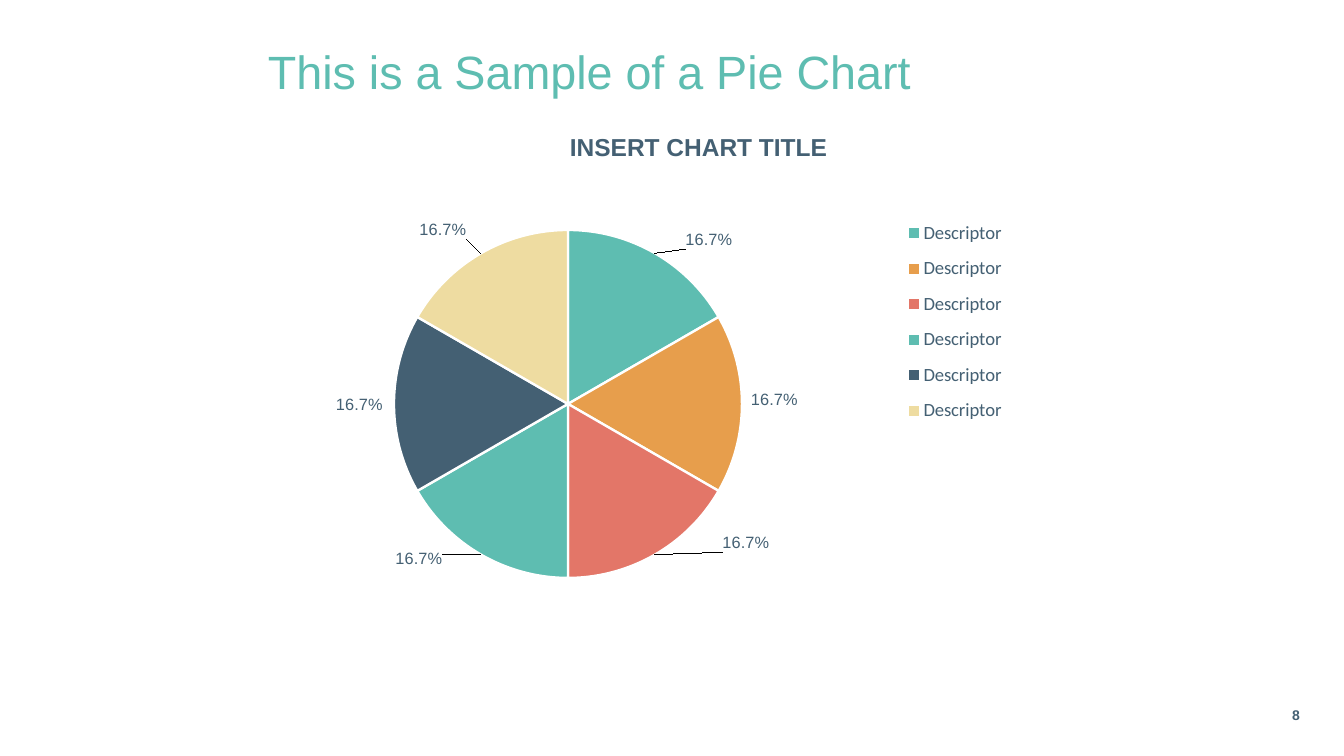
import dataclasses
import typing

import lxml.etree
import pptx
import pptx.chart.data
import pptx.dml.color
import pptx.enum.chart
import pptx.enum.text
import pptx.oxml.ns
import pptx.util

PX = 914400 // 84  # EMU per px


@dataclasses.dataclass(frozen=True)
class Theme:
    teal: str = "5EBDB1"
    orange: str = "E79E4C"
    coral: str = "E37668"
    slate: str = "446073"
    cream: str = "EEDCA1"
    white: str = "FFFFFF"
    font: str = "Arial"
    legend_font: str = "Calibri"
    title_size: int = 40
    heading_size: int = 21
    legend_size: int = 16
    label_size: int = 14
    number_size: int = 12


class Box(typing.NamedTuple):
    x: int
    y: int
    w: int
    h: int


class Slice(typing.NamedTuple):
    name: str
    value: float
    color: str
    dx: int  # label shift in px
    dy: int


T = Theme()
ALIGN = pptx.enum.text.PP_ALIGN
ANCHOR = pptx.enum.text.MSO_ANCHOR
CHART = Box(144, 125, 1074, 483)
PIE = Box(336, 230, 464, 348)
LEGEND = Box(899, 209, 112, 226)
SLICES = [
    Slice("Descriptor", 16.7, T.teal, 28, 0),
    Slice("Descriptor", 16.7, T.orange, 4, -4),
    Slice("Descriptor", 16.7, T.coral, 65, -25),
    Slice("Descriptor", 16.7, T.teal, -36, -9),
    Slice("Descriptor", 16.7, T.slate, -6, 1),
    Slice("Descriptor", 16.7, T.cream, -12, -10),
]


def rgb(color: str) -> pptx.dml.color.RGBColor:
    return pptx.dml.color.RGBColor.from_string(color)


def emu(box: Box) -> list[int]:
    return [v * PX for v in box]


def set_font(font, name: str, size: int, color: str, bold: bool = False) -> None:
    font.name, font.size, font.bold = name, pptx.util.Pt(size), bold
    font.color.rgb = rgb(color)


def add_text(s, box: Box, text: str, *, size: int, color: str = T.slate,
             bold: bool = False, align=ALIGN.LEFT, anchor=ANCHOR.TOP,
             inset: tuple[int, int] = (0, 0)) -> None:
    tf = s.shapes.add_textbox(*emu(box)).text_frame
    tf.word_wrap = True
    tf.vertical_anchor = anchor
    tf.margin_left = tf.margin_right = inset[0] * PX
    tf.margin_top = tf.margin_bottom = inset[1] * PX
    p = tf.paragraphs[0]
    p.alignment = align
    r = p.add_run()
    r.text = text
    set_font(r.font, T.font, size, color, bold)


def make_layout(**values: typing.Any):
    """Build a manual chart layout from its settings."""
    qn = pptx.oxml.ns.qn
    layout = lxml.etree.Element(qn("c:layout"))
    manual = lxml.etree.SubElement(layout, qn("c:manualLayout"))
    for tag, value in values.items():
        lxml.etree.SubElement(manual, qn(f"c:{tag}")).set("val", str(value))
    return layout


def box_layout(box: Box, **target: str):
    return make_layout(
        **target, xMode="edge", yMode="edge",
        x=round((box.x - CHART.x) / CHART.w, 4),
        y=round((box.y - CHART.y) / CHART.h, 4),
        w=round(box.w / CHART.w, 4), h=round(box.h / CHART.h, 4))


def add_pie(s) -> None:
    data = pptx.chart.data.CategoryChartData()
    data.categories = [item.name for item in SLICES]
    data.add_series("Series 1", [item.value for item in SLICES])
    kind = pptx.enum.chart.XL_CHART_TYPE.PIE
    chart = s.shapes.add_chart(kind, *emu(CHART), data).chart
    chart.has_title = False
    set_font(chart.font, T.legend_font, T.legend_size, T.slate)

    # Legend and plot placement
    chart.has_legend = True
    legend = chart.legend
    legend.position = pptx.enum.chart.XL_LEGEND_POSITION.RIGHT
    legend.include_in_layout = False
    set_font(legend.font, T.legend_font, T.legend_size, T.slate)
    qn = pptx.oxml.ns.qn
    area = chart.plots[0]._element.getparent()
    for parent, layout in (
            (area, box_layout(PIE, layoutTarget="inner")),
            (legend._element, box_layout(LEGEND))):
        for old in parent.findall(qn("c:layout")):
            parent.remove(old)
        parent.insert(0 if parent is area else 1, layout)

    # Percent labels
    series = chart.plots[0].series[0]
    outside = pptx.enum.chart.XL_LABEL_POSITION.OUTSIDE_END
    labels = series.data_labels
    labels.number_format, labels.number_format_is_linked = "0.0%", False
    labels.show_value, labels.show_percentage = False, True
    labels.position = outside
    set_font(labels.font, T.font, T.label_size, T.slate)

    # Slices, each with a shifted label
    for i, item in enumerate(SLICES):
        point = series.points[i]
        point.format.fill.solid()
        point.format.fill.fore_color.rgb = rgb(item.color)
        point.format.line.color.rgb = rgb(T.white)
        point.format.line.width = pptx.util.Pt(2)
        point.data_label.position = outside
        set_font(point.data_label.font, T.font, T.label_size, T.slate)
        label = labels._element.findall(qn("c:dLbl"))[i]
        label.insert(1, make_layout(x=round(item.dx / CHART.w, 4),
                                    y=round(item.dy / CHART.h, 4)))
        fmt = lxml.etree.Element(qn("c:numFmt"))
        fmt.set("formatCode", "0.0%")
        fmt.set("sourceLinked", "0")
        label.insert(2, fmt)
        label.find(qn("c:showVal")).set("val", "0")
        label.find(qn("c:showPercent")).set("val", "1")


def main() -> None:
    prs = pptx.Presentation()
    prs.slide_width, prs.slide_height = 1344 * PX, 756 * PX
    s = prs.slides.add_slide(prs.slide_layouts[6])

    add_pie(s)

    # Title, chart heading and slide number
    add_text(s, Box(268, 43, 1034, 134), "This is a Sample of a Pie Chart",
             size=T.title_size, color=T.teal)
    add_text(s, Box(277, 126, 843, 41), "INSERT CHART TITLE",
             size=T.heading_size, bold=True, align=ALIGN.CENTER,
             anchor=ANCHOR.BOTTOM, inset=(12, 6))
    add_text(s, Box(1250, 707, 50, 22), "8", size=T.number_size, bold=True,
             align=ALIGN.RIGHT)

    prs.save("out.pptx")


if __name__ == "__main__":
    main()
